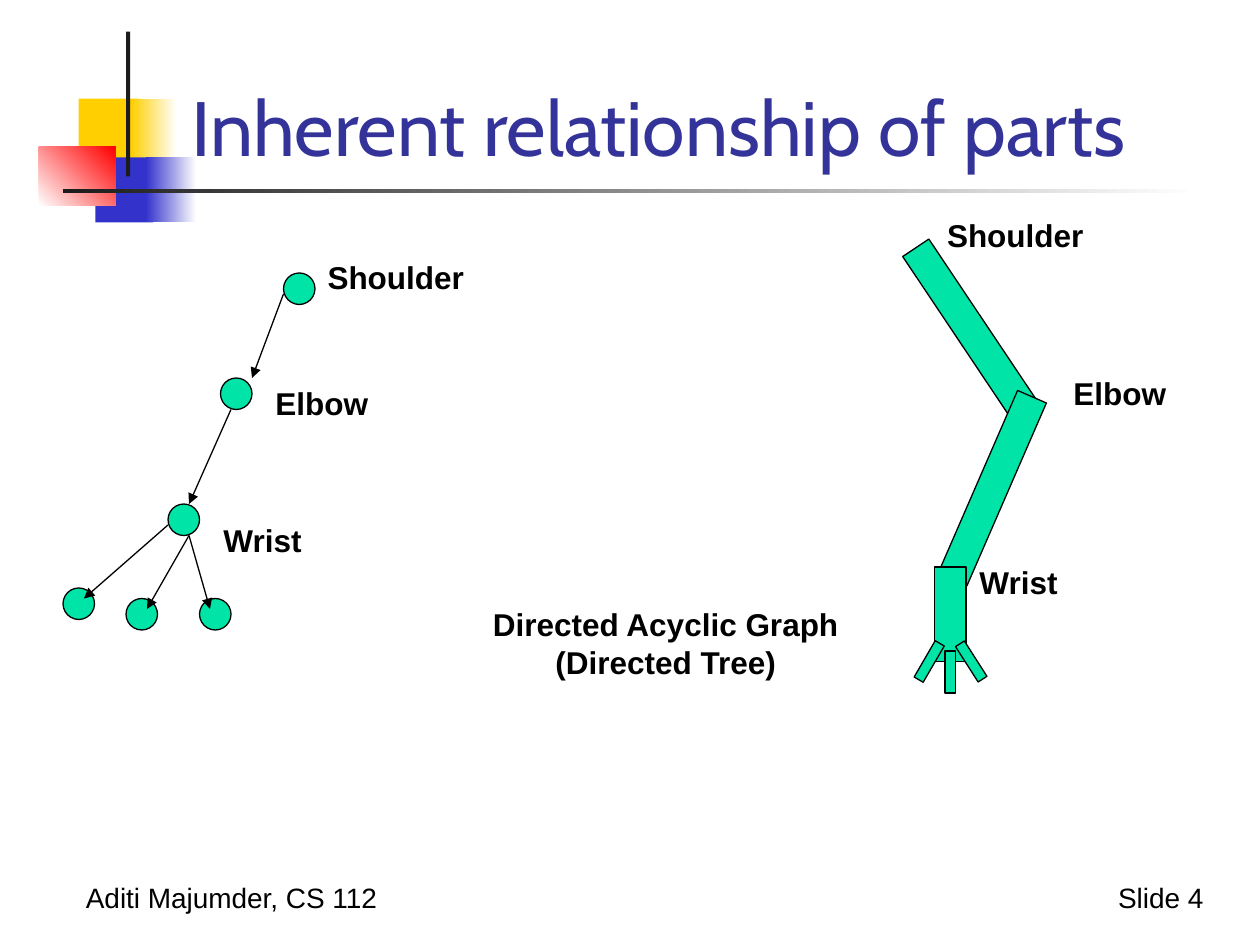
import pptx
import pptx.util
import pptx.dml.color
import pptx.enum.shapes
import pptx.enum.text
import pptx.oxml.ns

SHAPE = pptx.enum.shapes.MSO_SHAPE
ALIGN = pptx.enum.text.PP_ALIGN


def rgb(code):
    return pptx.dml.color.RGBColor.from_string(code)


def cell(count):
    """Length of a number of grid cells, twelve to the inch."""
    return pptx.util.Inches(count / 12)


class Deck:
    font, head = "Arial", "Cabin"
    ink, navy, skin = "000000", "333399", "00E4A8"
    thin = pptx.util.Pt(0.75)

    def __init__(self):
        self.file = pptx.Presentation()
        self.file.slide_width, self.file.slide_height = cell(120), cell(90)
        self.slide = self.file.slides.add_slide(self.file.slide_layouts[5])
        self.shapes = self.slide.shapes

    def style(self, frame, size, color, font, bold, align):
        for para in frame.paragraphs:
            para.alignment = align
            for run in para.runs:
                run.font.size = pptx.util.Pt(size)
                run.font.name = font
                run.font.bold = bold
                run.font.color.rgb = rgb(color)

    def title(self, text, *box):
        item = self.shapes.title
        item.left, item.top, item.width, item.height = map(cell, box)
        frame = item.text_frame
        frame.text = text
        frame.word_wrap = True
        frame.auto_size = pptx.enum.text.MSO_AUTO_SIZE.NONE
        frame.vertical_anchor = pptx.enum.text.MSO_ANCHOR.BOTTOM
        self.style(frame, 44, self.navy, self.head, False, ALIGN.LEFT)
        # Bring the title in front of the ornament
        item.element.getparent().append(item.element)

    def text(self, text, *box, size=18, bold=True, align=ALIGN.CENTER):
        frame = self.shapes.add_textbox(*map(cell, box)).text_frame
        frame.text = text
        frame.word_wrap = False
        self.style(frame, size, self.ink, self.font, bold, align)

    def block(self, kind, *box):
        item = self.shapes.add_shape(kind, *map(cell, box))
        item.shadow.inherit = False
        return item

    def band(self, colors, *box, angle=0):
        """Unlined ornament, plain or fading between two colours."""
        item = self.block(SHAPE.RECTANGLE, *box)
        item.line.fill.background()
        if len(colors) == 1:
            item.fill.solid()
            item.fill.fore_color.rgb = rgb(colors[0])
            return
        item.fill.gradient()
        item.fill.gradient_angle = angle
        for stop, color, place in zip(item.fill.gradient_stops, colors, (0, 1)):
            stop.color.rgb = rgb(color)
            stop.position = place

    def limb(self, *box, kind=SHAPE.RECTANGLE, turn=0):
        item = self.block(kind, *box)
        item.rotation = turn
        item.fill.solid()
        item.fill.fore_color.rgb = rgb(self.skin)
        item.line.color.rgb = rgb(self.ink)
        item.line.width = self.thin

    def node(self, col, row):
        self.limb(col, row, 3, 3, kind=SHAPE.OVAL)

    def arrow(self, *ends):
        kind = pptx.enum.shapes.MSO_CONNECTOR.STRAIGHT
        item = self.shapes.add_connector(kind, *map(cell, ends))
        item.line.color.rgb = rgb(self.ink)
        item.line.width = self.thin
        name = pptx.oxml.ns.qn
        props = item.element.spPr
        edge = props.find(name("a:ln"))
        edge.append(edge.makeelement(name("a:tailEnd"), {"type": "triangle"}))
        props.append(props.makeelement(name("a:effectLst"), {}))


def main():
    deck = Deck()

    # Ornament
    gold, blue, red, dark, white = "FFCF01", "3333CC", "FF0000", "1C1C1C", "FFFFFF"
    deck.band([gold], 7.5, 9.4, 5.8, 6.2)
    deck.band([gold, white], 12.5, 9.4, 4.3, 6.2)
    deck.band([blue], 9.1, 15, 5.5, 6.2)
    deck.band([blue, white], 13.9, 15, 4.8, 6.2)
    deck.band([white, red], 3.7, 14, 7.3, 5.6, angle=45)
    deck.band([dark], 12, 3, 0.4, 13.8)
    deck.band([dark, white], 6, 18, 108, 0.4)

    # Footer and title
    deck.text("Aditi Majumder, CS 112", 7, 83.3, 30.6, 4.4,
              size=16, bold=False, align=ALIGN.LEFT)
    deck.text("Slide 4", 103.4, 83.3, 12.4, 4.4,
              size=16, bold=False, align=ALIGN.RIGHT)
    deck.title("Inherent relationship of parts", 17, 3, 100.3, 14)

    # Arm: upper arm, forearm, hand
    deck.limb(91, 22, 3, 19, turn=326.2)
    deck.limb(93, 37, 3, 19, turn=23.5)
    deck.limb(89, 54, 3, 9)

    # Fingers
    for col, row, turn in ((88, 61, 30.1), (90, 62, 0), (92, 61, 327.4)):
        deck.limb(col, row, 1, 4, turn=turn)

    # Tree: joints, fingertips, links
    for spot in ((27, 26), (21, 36), (16, 48), (6, 56), (12, 57), (19, 57)):
        deck.node(*spot)
    for ends in ((27, 28, 24, 36), (22, 39, 18, 48), (16, 50, 8, 57),
                 (18, 51, 14, 58), (18, 51, 20, 58)):
        deck.arrow(*ends)

    # Joint names beside the arm and the tree
    for name, wide, *spots in (("Shoulder", 15.4, (89, 20), (30, 24)),
                               ("Elbow", 11.3, (101, 35), (25, 36)),
                               ("Wrist", 10, (92, 53), (20, 49))):
        for spot in spots:
            deck.text(name, *spot, wide, 4.8)
    deck.text("Directed Acyclic Graph\n(Directed Tree)", 45.6, 57, 35.6, 8.5)

    deck.file.save("out.pptx")


if __name__ == "__main__":
    main()
